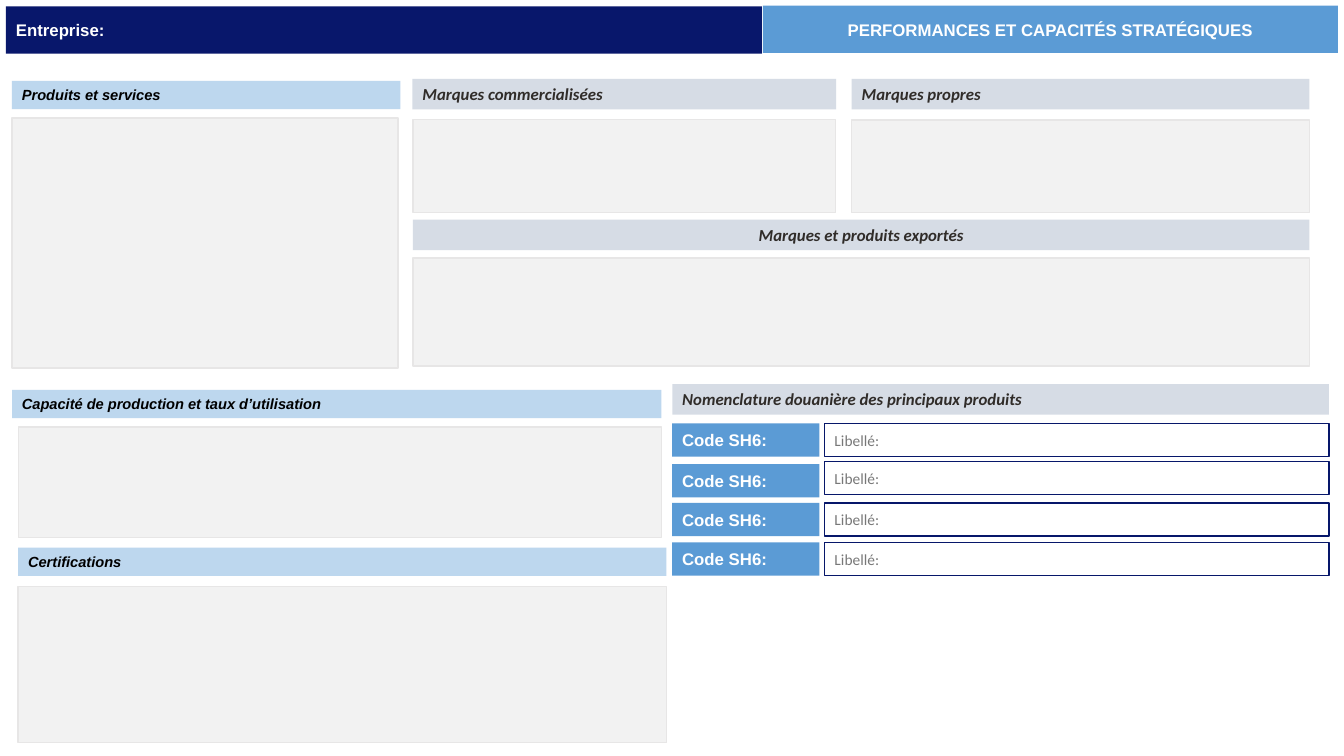
from dataclasses import dataclass

from pptx import Presentation
from pptx.dml.color import RGBColor
from pptx.enum import shapes, text
from pptx.util import Pt


@dataclass(frozen=True)
class Theme:
    navy: str = "08176B"
    outline: str = "07176A"
    blue: str = "5B9BD5"
    sky: str = "BDD7EE"
    mist: str = "D6DCE5"
    panel: str = "F2F2F2"
    panel_edge: str = "E7E6E6"
    white: str = "FFFFFF"
    black: str = "000000"
    ink: str = "302C29"
    grey: str = "787878"
    sans: str = "Arial"
    body: str = "Calibri"
    small: float = 10.5
    hint: float = 11
    normal: float = 12


T = Theme()
LEFT, CENTER = text.PP_ALIGN.LEFT, text.PP_ALIGN.CENTER
TOP, MIDDLE = text.MSO_ANCHOR.TOP, text.MSO_ANCHOR.MIDDLE


def add_box(s, box, fill=None, line=None):
    """Rectangle with box = left, top, width, height in points."""
    sp = s.shapes.add_shape(shapes.MSO_SHAPE.RECTANGLE, *map(Pt, box))
    sp.shadow.inherit = False
    if fill:
        sp.fill.solid()
        sp.fill.fore_color.rgb = RGBColor.from_string(fill)
    else:
        sp.fill.background()
    if line:
        sp.line.color.rgb = RGBColor.from_string(line)
        sp.line.width = Pt(1)
    else:
        sp.line.fill.background()
    return sp


def write(sp, words, color, font, align=LEFT, anchor=TOP):
    tf = sp.text_frame
    tf.word_wrap = True
    tf.vertical_anchor = anchor
    p = tf.paragraphs[0]
    p.alignment = align
    r = p.add_run()
    r.text = words
    for name, value in font.items():
        setattr(r.font, name, value)
    r.font.color.rgb = RGBColor.from_string(color)


def add_panel(s, box):
    add_box(s, box, T.panel, T.panel_edge)


def add_banner(s, box, words, fill, align=LEFT):
    font = {"name": T.sans, "size": Pt(T.normal), "bold": True}
    write(add_box(s, box, fill), words, T.white, font, align, MIDDLE)


def add_sky_heading(s, box, words):
    font = {"name": T.sans, "size": Pt(T.small), "bold": True, "italic": True}
    sp = add_box(s, box, T.sky)
    write(sp, words, T.black, font)
    sp.text_frame.auto_size = text.MSO_AUTO_SIZE.SHAPE_TO_FIT_TEXT


def add_mist_heading(s, box, words, align=LEFT):
    font = {"name": T.body, "size": Pt(T.normal), "bold": True, "italic": True}
    sp = add_box(s, box, T.mist)
    write(sp, words, T.ink, font, align)
    sp.text_frame.auto_size = text.MSO_AUTO_SIZE.SHAPE_TO_FIT_TEXT


def add_code_row(s, code_top, label_top):
    height = 23.8
    add_banner(s, (480.2, code_top, 105.1, height), "Code SH6:", T.blue)
    sp = add_box(s, (589, label_top, 360.4, height), line=T.outline)
    font = {"name": T.body, "size": Pt(T.hint)}
    write(sp, "Libellé:", T.grey, font, anchor=MIDDLE)


def main():
    prs = Presentation()
    prs.slide_width, prs.slide_height = Pt(960), Pt(540)
    s = prs.slides.add_slide(prs.slide_layouts[6])

    # Title band
    add_banner(s, (4.3, 4.6, 540, 33.8), "Entreprise:", T.navy)
    add_banner(s, (545, 4.1, 410.6, 33.8),
               "PERFORMANCES ET CAPACITÉS STRATÉGIQUES", T.blue, CENTER)

    # Empty panels to fill in
    for box in ((8.6, 84.2, 275.8, 178.6),
                (295, 85.5, 302, 66.2),
                (608.4, 85.7, 326.9, 66.2),
                (295, 184.2, 640.3, 77.3),
                (13, 305, 459.4, 78.8),
                (13, 419, 463, 111.6)):
        add_panel(s, box)

    # Headings of the left column
    sky_height = 20.2
    for left, top, width, words in (
            (8.6, 57.7, 277.4, "Produits et services"),
            (8.6, 278.5, 463.9, "Capacité de production et taux d’utilisation"),
            (13, 391.2, 463, "Certifications")):
        add_sky_heading(s, (left, top, width, sky_height), words)

    # Headings for brands and customs codes
    mist_height = 21.8
    for left, top, width, words, align in (
            (294.6, 56.3, 302.6, "Marques commercialisées", LEFT),
            (608.4, 56.3, 326.9, "Marques propres", LEFT),
            (295, 156.8, 640.3, "Marques et produits exportés", CENTER),
            (480.2, 274.3, 469, "Nomenclature douanière des principaux produits", LEFT)):
        add_mist_heading(s, (left, top, width, mist_height), words, align)

    # Customs codes
    for code_top, label_top in ((302.4, 302.4), (331.6, 329.6),
                                (359.2, 359.2), (387.4, 387.4)):
        add_code_row(s, code_top, label_top)

    prs.save("out.pptx")


if __name__ == "__main__":
    main()
